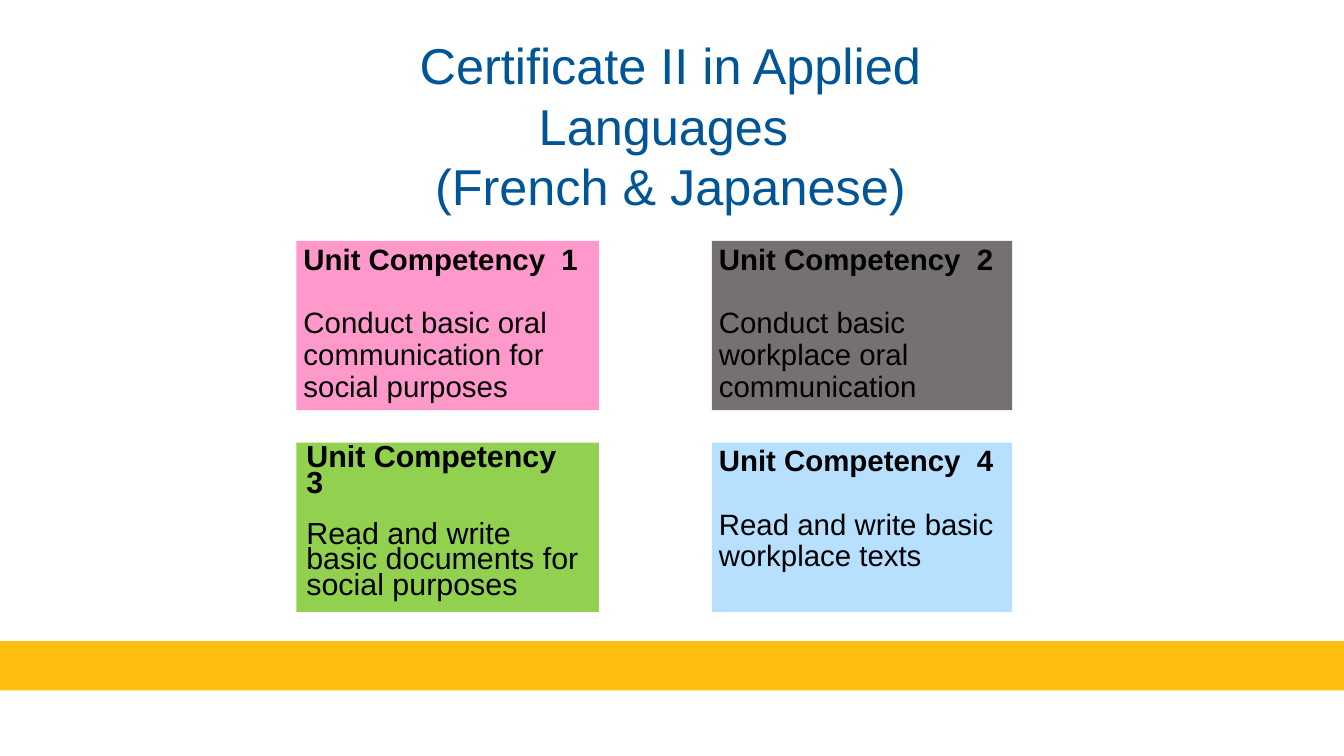
from dataclasses import dataclass

from pptx import Presentation
from pptx.dml.color import RGBColor
from pptx.enum.shapes import MSO_SHAPE
from pptx.enum.text import MSO_ANCHOR, MSO_AUTO_SIZE, PP_ALIGN
from pptx.util import Inches, Pt

RECTANGLE = MSO_SHAPE.RECTANGLE
TOP = MSO_ANCHOR.TOP
GROW = MSO_AUTO_SIZE.SHAPE_TO_FIT_TEXT
LEFT, CENTER = PP_ALIGN.LEFT, PP_ALIGN.CENTER
TITLE_ONLY = 5


@dataclass(frozen=True)
class Theme:
    font: str = "Arial"
    title_color: str = "005596"
    text_color: str = "000000"
    band: str = "FEBE10"
    pink: str = "FF99CC"
    gray: str = "767171"
    green: str = "92D050"
    blue: str = "B7E0FF"
    title_size: float = 36
    card_size: float = 21
    tight_size: float = 21.7


def write(paragraph, text, *, theme, size, color, bold=False, align=LEFT,
          line=1.0, before=0):
    paragraph.text = text
    paragraph.alignment = align
    paragraph.line_spacing = line
    paragraph.space_before = Pt(before)
    font = paragraph.font
    font.name, font.size, font.bold = theme.font, Pt(size), bold
    font.color.rgb = RGBColor.from_string(color)


class SlideBuilder:
    def __init__(self, slide, theme):
        self.slide = slide
        self.theme = theme

    def title(self, text, left, top, width, height):
        title = self.slide.shapes.title
        title.left, title.top = Inches(left), Inches(top)
        title.width, title.height = Inches(width), Inches(height)
        frame = title.text_frame
        frame.word_wrap = True
        frame.auto_size = GROW
        frame.vertical_anchor = TOP
        write(frame.paragraphs[0], text, theme=self.theme, align=CENTER,
              size=self.theme.title_size, color=self.theme.title_color)

    def block(self, left, top, width, height, fill):
        block = self.slide.shapes.add_shape(
            RECTANGLE, Inches(left), Inches(top), Inches(width), Inches(height))
        block.shadow.inherit = False
        block.fill.solid()
        block.fill.fore_color.rgb = RGBColor.from_string(fill)
        block.line.fill.background()
        return block

    def card(self, left, top, width, height, fill, heading, body, *,
             size, line, gap, insets):
        """Draw a unit card; gap is the space in points above the body."""
        frame = self.block(left, top, width, height, fill).text_frame
        frame.word_wrap = True
        frame.vertical_anchor = TOP
        side, edge = insets
        frame.margin_left = frame.margin_right = Inches(side)
        frame.margin_top = frame.margin_bottom = Inches(edge)
        look = dict(theme=self.theme, size=size, line=line,
                    color=self.theme.text_color)
        write(frame.paragraphs[0], heading, bold=True, **look)
        write(frame.add_paragraph(), body, before=gap, **look)


def main():
    theme = Theme()
    deck = Presentation()
    deck.slide_width, deck.slide_height = Inches(13.33), Inches(7.5)
    builder = SlideBuilder(
        deck.slides.add_slide(deck.slide_layouts[TITLE_ONLY]), theme)

    builder.block(0, 6.36, 13.33, 0.49, theme.band)
    builder.title("Certificate II in Applied Languages \v(French & Japanese)",
                  3.34, 0.29, 6.62, 1.92)

    regular = dict(size=theme.card_size, line=0.9, gap=22.5, insets=(0.07, 0.04))
    tight = dict(size=theme.tight_size, line=0.7, gap=18, insets=(0.1, 0.05))
    units = [
        (theme.pink, "Conduct basic oral communication for social purposes", regular),
        (theme.gray, "Conduct basic workplace oral communication", regular),
        (theme.green, "Read and write basic documents for social purposes", tight),
        (theme.blue, "Read and write basic workplace texts", regular),
    ]
    columns = [(2.94, 3), (7.06, 2.98)]
    for index, (fill, competency, style) in enumerate(units):
        row, column = divmod(index, len(columns))
        left, width = columns[column]
        builder.card(left, 2.39 + 2 * row, width, 1.68, fill,
                     f"Unit Competency  {index + 1}", competency, **style)

    deck.save("out.pptx")


if __name__ == "__main__":
    main()
